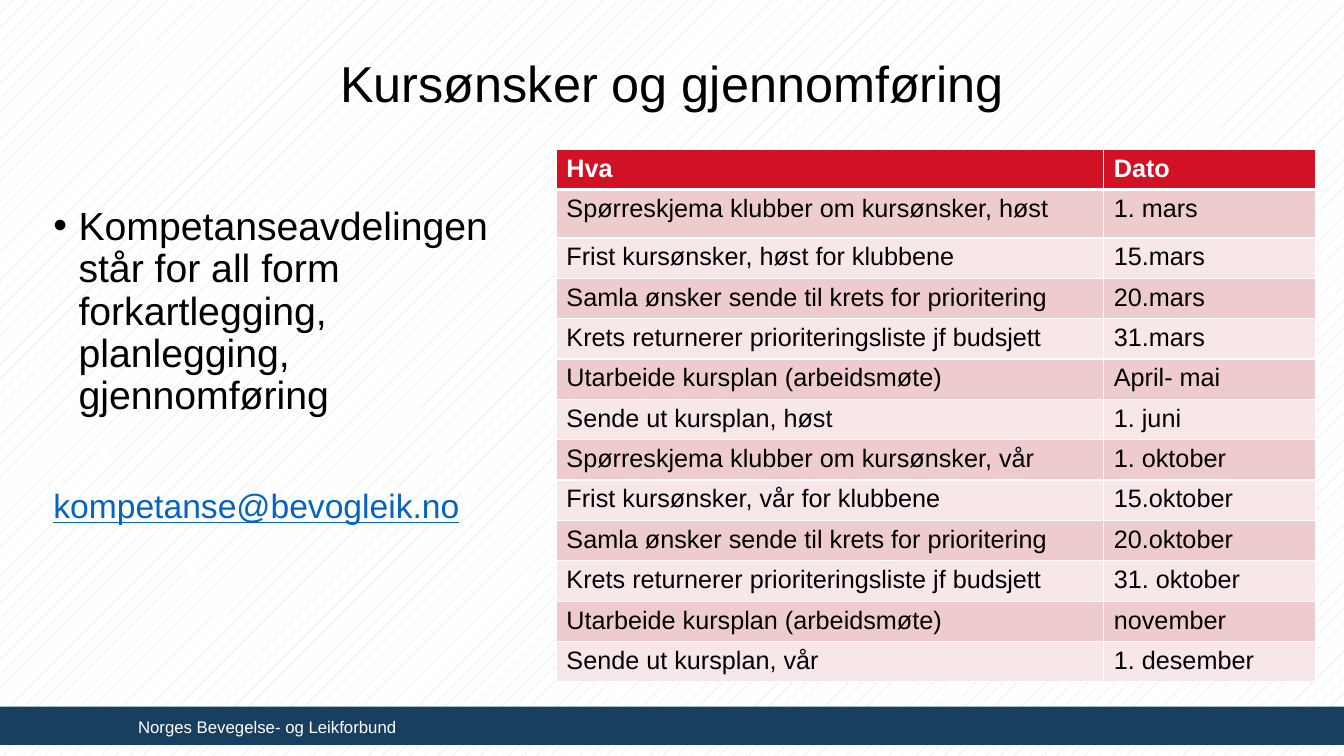
"""Build the slide on course requests and their yearly deadlines."""
from lxml import etree
from pptx import Presentation
from pptx.dml.color import RGBColor
from pptx.enum.dml import MSO_PATTERN
from pptx.enum.shapes import MSO_SHAPE
from pptx.enum.text import MSO_ANCHOR, MSO_AUTO_SIZE, PP_ALIGN
from pptx.oxml.ns import qn
from pptx.util import Inches, Pt

RECTANGLE = MSO_SHAPE.RECTANGLE
DOTS = MSO_PATTERN.PERCENT_5
CENTER = PP_ALIGN.CENTER
MIDDLE = MSO_ANCHOR.MIDDLE
NO_AUTOFIT = MSO_AUTO_SIZE.NONE

THEME = {
    "font": "Arial",
    "black": RGBColor.from_string("000000"),
    "white": RGBColor.from_string("FFFFFF"),
    "dots": RGBColor.from_string("D9D9D9"),
    "navy": RGBColor.from_string("173F5F"),
    "link": RGBColor.from_string("0563C1"),
    "header": RGBColor.from_string("D21125"),
    "bands": [RGBColor.from_string("EECCCD"), RGBColor.from_string("F7E7E8")],
    "title_size": 36,
    "body_size": 28,
    "link_size": 24,
    "table_size": 18,
    "footer_size": 12,
}

DEADLINES = [
    ("Hva", "Dato"),
    ("Spørreskjema klubber om kursønsker, høst", "1. mars"),
    ("Frist kursønsker, høst for klubbene", "15.mars"),
    ("Samla ønsker sende til krets for prioritering", "20.mars"),
    ("Krets returnerer prioriteringsliste jf budsjett", "31.mars"),
    ("Utarbeide kursplan (arbeidsmøte)", "April- mai"),
    ("Sende ut kursplan, høst", "1. juni"),
    ("Spørreskjema klubber om kursønsker, vår", "1. oktober"),
    ("Frist kursønsker, vår for klubbene", "15.oktober"),
    ("Samla ønsker sende til krets for prioritering", "20.oktober"),
    ("Krets returnerer prioriteringsliste jf budsjett", "31. oktober"),
    ("Utarbeide kursplan (arbeidsmøte)", "november"),
    ("Sende ut kursplan, vår", "1. desember"),
]

deck = Presentation()
deck.slide_width, deck.slide_height = Inches(13.33), Inches(7.5)


def percent(left, top, width, height):
    """Turn shares of the slide, in percent, into lengths."""
    across, down = deck.slide_width / 100, deck.slide_height / 100
    return [int(left * across), int(top * down), int(width * across), int(height * down)]


def write(para, text, size, color, **formats):
    """Add a span with the theme font to a paragraph."""
    span = para.add_run()
    span.text = text
    span.font.color.rgb = color
    for name, value in {"name": THEME["font"], "size": Pt(size), **formats}.items():
        setattr(span.font, name, value)


slide = deck.slides.add_slide(deck.slide_layouts[5])
backdrop = slide.background.fill
backdrop.patterned()
backdrop.pattern = DOTS
backdrop.fore_color.rgb = THEME["dots"]
backdrop.back_color.rgb = THEME["white"]

bar = slide.shapes.add_shape(RECTANGLE, *percent(0, 93.47, 100, 5.07))
bar.shadow.inherit = False
bar.fill.solid()
bar.fill.fore_color.rgb = THEME["navy"]
bar.line.fill.background()

footer = slide.shapes.add_textbox(*percent(9.53, 94.13, 29.03, 4.5))
footer.text_frame.word_wrap = True
write(footer.text_frame.paragraphs[0], "Norges Bevegelse- og Leikforbund",
      THEME["footer_size"], THEME["white"])

title = slide.shapes.title
title_place = percent(6.9, 1.73, 86.25, 19.33)
for name, value in zip(("left", "top", "width", "height"), title_place):
    setattr(title, name, value)
title.text_frame.auto_size = NO_AUTOFIT
title.text_frame.vertical_anchor = MIDDLE
heading = title.text_frame.paragraphs[0]
heading.alignment = CENTER
heading.line_spacing = 0.9
write(heading, "Kursønsker og gjennomføring", THEME["title_size"], THEME["black"])

body = slide.shapes.add_textbox(*percent(3.23, 26.67, 34.5, 63.47))
body.text_frame.word_wrap = True
duties = body.text_frame.paragraphs[0]
contact = body.text_frame.add_paragraph()
indent = Inches(0.25)
duties_format = duties._p.get_or_add_pPr()
duties_format.set("marL", str(indent))
duties_format.set("indent", str(-indent))
etree.SubElement(duties_format, qn("a:buFont"), typeface=THEME["font"])
etree.SubElement(duties_format, qn("a:buChar"), char="•")
for para, gap in ((duties, 0), (contact, 51)):
    para.line_spacing = 0.9
    para.space_before = Pt(gap)
write(duties, "Kompetanseavdelingen står for all form forkartlegging, planlegging, gjennomføring",
      THEME["body_size"], THEME["black"])
write(contact, "kompetanse@bevogleik.no", THEME["link_size"], THEME["link"], underline=True)

table_place = percent(41.4, 19.73, 56.48, 64)
table = slide.shapes.add_table(len(DEADLINES), 2, *table_place).table
for column, share in zip(table.columns, (40.73, 15.75)):
    column.width = int(deck.slide_width * share / 100)

for row_index, deadline in enumerate(DEADLINES):
    is_header = row_index == 0
    row_share = 6.4 if row_index == 1 else 4.8
    table.rows[row_index].height = int(deck.slide_height * row_share / 100)
    band = THEME["header"] if is_header else THEME["bands"][(row_index - 1) % 2]
    ink = THEME["white"] if is_header else THEME["black"]
    borders = {"lnL": 1, "lnR": 1, "lnT": 3 if row_index == 1 else 1, "lnB": 3 if is_header else 1}
    for column_index, text in enumerate(deadline):
        cell = table.cell(row_index, column_index)
        cell_format = cell._tc.get_or_add_tcPr()
        for side, weight in borders.items():
            border = etree.SubElement(cell_format, qn(f"a:{side}"), w=str(Pt(weight)))
            paint = etree.SubElement(border, qn("a:solidFill"))
            etree.SubElement(paint, qn("a:srgbClr"), val=str(THEME["white"]))
        cell.fill.solid()
        cell.fill.fore_color.rgb = band
        write(cell.text_frame.paragraphs[0], text, THEME["table_size"], ink, bold=is_header)

deck.save("out.pptx")
